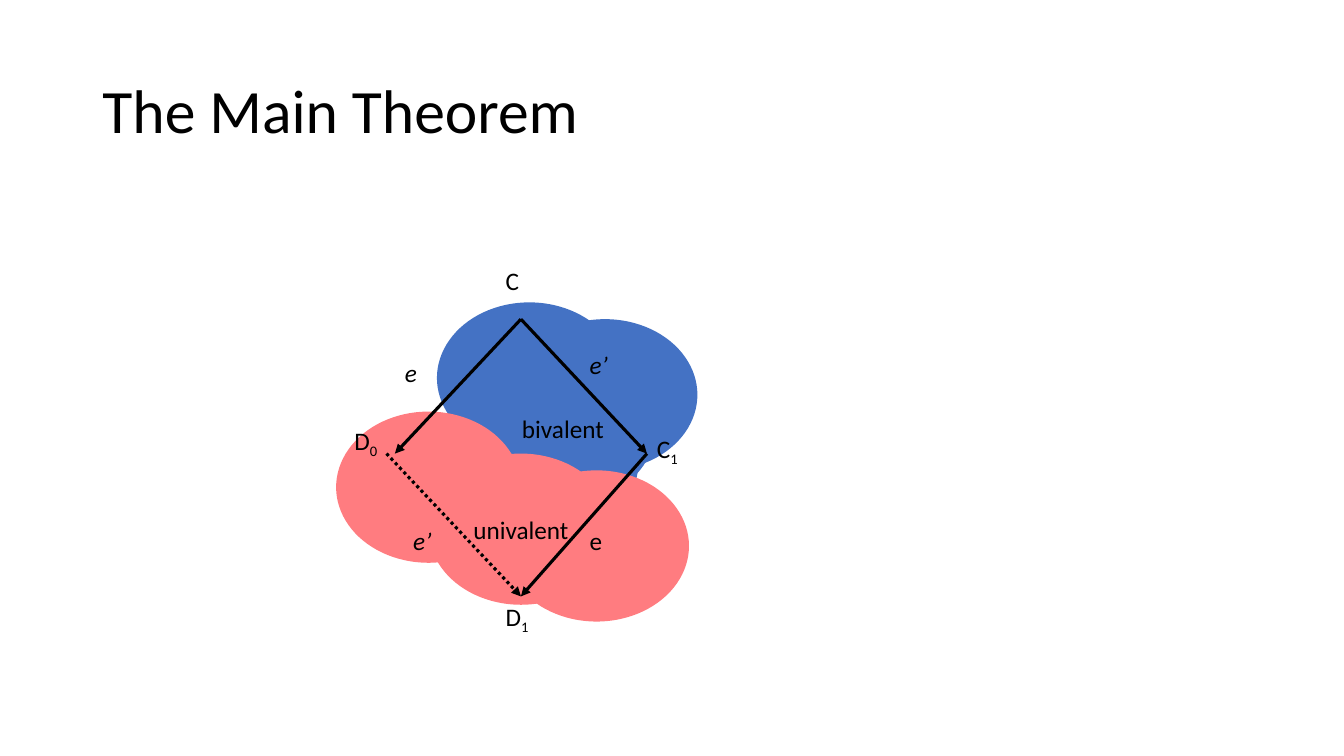
from dataclasses import dataclass

from lxml import etree
from pptx import Presentation
from pptx import util as u
from pptx.dml.color import RGBColor
from pptx.enum import dml, shapes, text
from pptx.oxml import ns


@dataclass(frozen=True)
class Theme:
    """Colours, type and line sizes, and the grid pitch of the slide."""
    font: str = "Calibri"
    ink: str = "000000"
    bivalent: str = "4472C4"
    univalent: str = "FF7C80"
    title: int = 44
    body: int = 18
    line: float = 2.25
    pitch: float = 1 / 12


class Diagram:
    """Draws on one slide, with lengths in grid columns and rows."""

    def __init__(self, slide, theme):
        """Keep the slide and its style."""
        self.slide, self.theme = slide, theme

    def grid(self, *cells):
        """Turn grid cells into lengths."""
        return [u.Inches(c * self.theme.pitch) for c in cells]

    def style(self, p, size, italic=None):
        """Set the font of a paragraph."""
        p.font.name, p.font.size = self.theme.font, u.Pt(size)
        p.font.color.rgb = RGBColor.from_string(self.theme.ink)
        p.font.italic = italic

    def title(self, words, x, y, w, h):
        """Fill and place the title placeholder."""
        sp = self.slide.shapes.title
        sp.left, sp.top, sp.width, sp.height = self.grid(x, y, w, h)
        tf = sp.text_frame
        tf.text = words
        tf.vertical_anchor = text.MSO_ANCHOR.MIDDLE
        p = tf.paragraphs[0]
        p.alignment, p.line_spacing = text.PP_ALIGN.LEFT, 0.9
        self.style(p, self.theme.title)

    def ellipse(self, x, y, fill, words=""):
        """Add one ellipse of a cloud."""
        sp = self.slide.shapes.add_shape(
            shapes.MSO_SHAPE.OVAL, *self.grid(x, y, 22, 18))
        sp.shadow.inherit = False
        sp.fill.solid()
        sp.fill.fore_color.rgb = RGBColor.from_string(fill)
        sp.line.fill.background()
        if words:
            tf = sp.text_frame
            tf.text, tf.word_wrap = words, False
            tf.vertical_anchor = text.MSO_ANCHOR.MIDDLE
            p = tf.paragraphs[0]
            p.alignment = text.PP_ALIGN.CENTER
            self.style(p, self.theme.body)

    def cloud(self, fill, words, corners):
        """Add overlapping ellipses, the last one holding the words."""
        for x, y in corners[:-1]:
            self.ellipse(x, y, fill)
        self.ellipse(*corners[-1], fill, words)

    def label(self, x, y, w, words, sub="", italic=None):
        """Add a label with an optional subscript."""
        tf = self.slide.shapes.add_textbox(*self.grid(x, y, w, 6)).text_frame
        tf.word_wrap = True
        tf.auto_size = text.MSO_AUTO_SIZE.SHAPE_TO_FIT_TEXT
        p = tf.paragraphs[0]
        p.add_run().text = words
        if sub:
            r = p.add_run()
            r.text = sub
            r._r.get_or_add_rPr().set("baseline", "-25000")
        self.style(p, self.theme.body, italic)

    def arrow(self, start, end, dash=None):
        """Add an arrow between two grid points."""
        c = self.slide.shapes.add_connector(
            shapes.MSO_CONNECTOR.STRAIGHT, *self.grid(*start, *end))
        c.line.width = u.Pt(self.theme.line)
        c.line.color.rgb = RGBColor.from_string(self.theme.ink)
        if dash:
            c.line.dash_style = dash
        ln = c.line._get_or_add_ln()
        etree.SubElement(ln, ns.qn("a:tailEnd"), type="triangle")
        etree.SubElement(c._element.spPr, ns.qn("a:effectLst"))


def main():
    """Build the slide and save it."""
    prs = Presentation()
    prs.slide_width, prs.slide_height = u.Inches(13.33), u.Inches(7.5)
    theme = Theme()
    d = Diagram(prs.slides.add_slide(prs.slide_layouts[5]), theme)

    d.title("The Main Theorem", 11, 4.8, 138, 17.4)
    d.cloud(theme.bivalent, "bivalent",
            [(52, 36), (54, 46), (61, 38), (56, 42)])
    d.cloud(theme.univalent, "univalent", [(60, 56), (40, 49), (51, 54)])

    d.label(69, 41, 16, "e’", italic=True)
    d.label(41, 50, 12, "D", "0")
    d.label(59, 71, 11, "D", "1")
    d.label(59, 31, 6, "C")
    d.label(77, 51, 16, "C", "1")
    d.label(48, 62, 14, "e’", italic=True)
    d.label(47, 42, 15, "e", italic=True)
    d.label(69, 62, 16, "e")

    c, c1, d1 = (62, 38), (77, 54), (62, 71)
    d.arrow(c, (47, 54))
    d.arrow(c, c1)
    d.arrow((46, 54), d1, dml.MSO_LINE.ROUND_DOT)
    d.arrow(c1, d1)
    prs.save("out.pptx")


if __name__ == "__main__":
    main()
